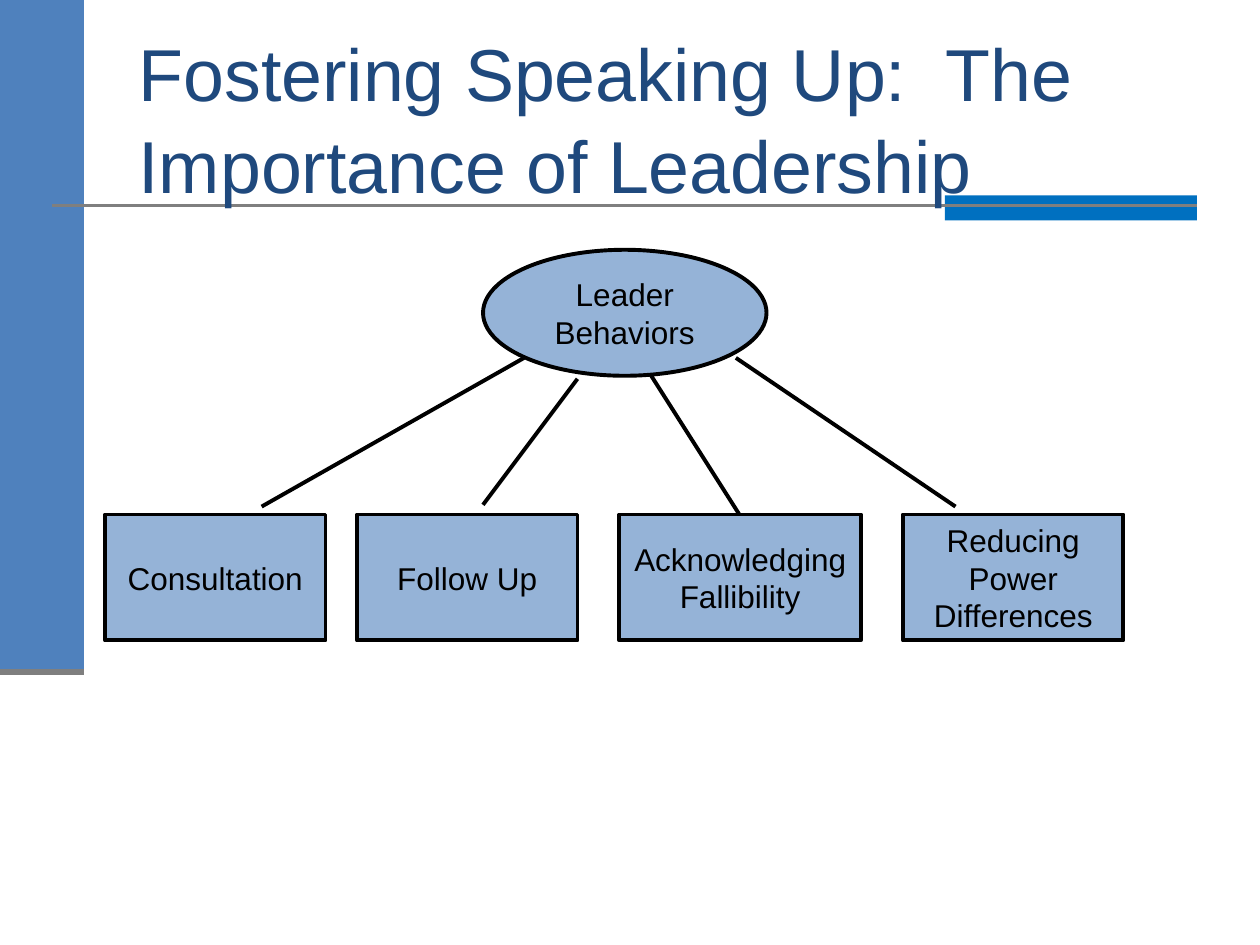
"""Builds a slide on the leader behaviors that foster speaking up."""
from dataclasses import dataclass

import lxml.etree
import pptx
import pptx.dml.color
import pptx.enum.shapes
import pptx.enum.text
import pptx.oxml.ns
import pptx.util

Pt = pptx.util.Pt
SHAPES = pptx.enum.shapes.MSO_SHAPE
ALIGN = pptx.enum.text.PP_ALIGN
MIDDLE = pptx.enum.text.MSO_ANCHOR.MIDDLE


@dataclass(frozen=True)
class Theme:
    font: str = "Arial"
    rail: str = "4F81BD"
    accent: str = "0070C0"
    rule: str = "7F7F7F"
    title: str = "1F497D"
    node: str = "95B3D7"
    ink: str = "000000"
    title_size: float = 42
    node_size: float = 18
    outline: float = 2.25


THEME = Theme()
BOX_TOP, NODE_HEIGHT = 294, 72
BEHAVIORS = [
    ("Consultation", 60, 126),
    ("Follow Up", 204, 126),
    ("Acknowledging Fallibility", 354, 138),
    ("Reducing Power\nDifferences", 516, 126),
]
SPOKES = [
    (299.5, 204.5, 149.5, 289.5),
    (330, 216.5, 276, 288.5),
    (372, 214.5, 422.5, 294),
    (420.5, 204.5, 546, 289.5),
]


def rgb(color):
    return pptx.dml.color.RGBColor.from_string(color)


def style_text(frame, size, color, align):
    frame.word_wrap = True
    frame.vertical_anchor = MIDDLE
    for paragraph in frame.paragraphs:
        paragraph.alignment = align
        paragraph.font.name = THEME.font
        paragraph.font.size = Pt(size)
        paragraph.font.color.rgb = rgb(color)


def add_block(slide, kind, left, top, width, height, fill):
    block = slide.shapes.add_shape(kind, Pt(left), Pt(top), Pt(width), Pt(height))
    block.shadow.inherit = False
    block.fill.solid()
    block.fill.fore_color.rgb = rgb(fill)
    block.line.fill.background()
    return block


def add_node(slide, kind, label, left, top, width):
    node = add_block(slide, kind, left, top, width, NODE_HEIGHT, THEME.node)
    node.line.color.rgb = rgb(THEME.ink)
    node.line.width = Pt(THEME.outline)
    node.text_frame.text = label
    style_text(node.text_frame, THEME.node_size, THEME.ink, ALIGN.CENTER)


def add_line(slide, ends, color, width):
    line = slide.shapes.add_connector(
        pptx.enum.shapes.MSO_CONNECTOR.STRAIGHT, *[Pt(value) for value in ends]
    )
    line.line.color.rgb = rgb(color)
    line.line.width = Pt(width)
    lxml.etree.SubElement(line._element.spPr, pptx.oxml.ns.qn("a:effectLst"))


def add_decoration(slide):
    add_block(slide, SHAPES.RECTANGLE, 0, 0, 48, 384, THEME.rail)
    add_block(slide, SHAPES.RECTANGLE, 540, 111.6, 144, 14.4, THEME.accent)
    add_line(slide, (30, 117.5, 684, 117.5), THEME.rule, 1.5)
    add_line(slide, (0, 384, 48, 384), THEME.rule, 3.5)


def place_title(slide, text):
    title = slide.shapes.title
    title.left, title.top, title.width, title.height = Pt(72), Pt(21.6), Pt(612), Pt(90)
    title.text_frame.text = text
    title.text_frame.auto_size = pptx.enum.text.MSO_AUTO_SIZE.NONE
    style_text(title.text_frame, THEME.title_size, THEME.title, ALIGN.LEFT)
    title.text_frame.paragraphs[0].line_spacing = 1.04
    slide.shapes._spTree.append(title._element)


def main():
    deck = pptx.Presentation()
    deck.slide_width, deck.slide_height = Pt(720), Pt(540)
    slide = deck.slides.add_slide(deck.slide_layouts[5])
    add_decoration(slide)
    place_title(slide, "Fostering Speaking Up:  The Importance of Leadership")
    add_node(slide, SHAPES.OVAL, "Leader Behaviors", 276, 142.75, 162)
    for spoke in SPOKES:
        add_line(slide, spoke, THEME.ink, THEME.outline)
    for label, left, width in BEHAVIORS:
        add_node(slide, SHAPES.RECTANGLE, label, left, BOX_TOP, width)
    deck.save("out.pptx")


if __name__ == "__main__":
    main()
